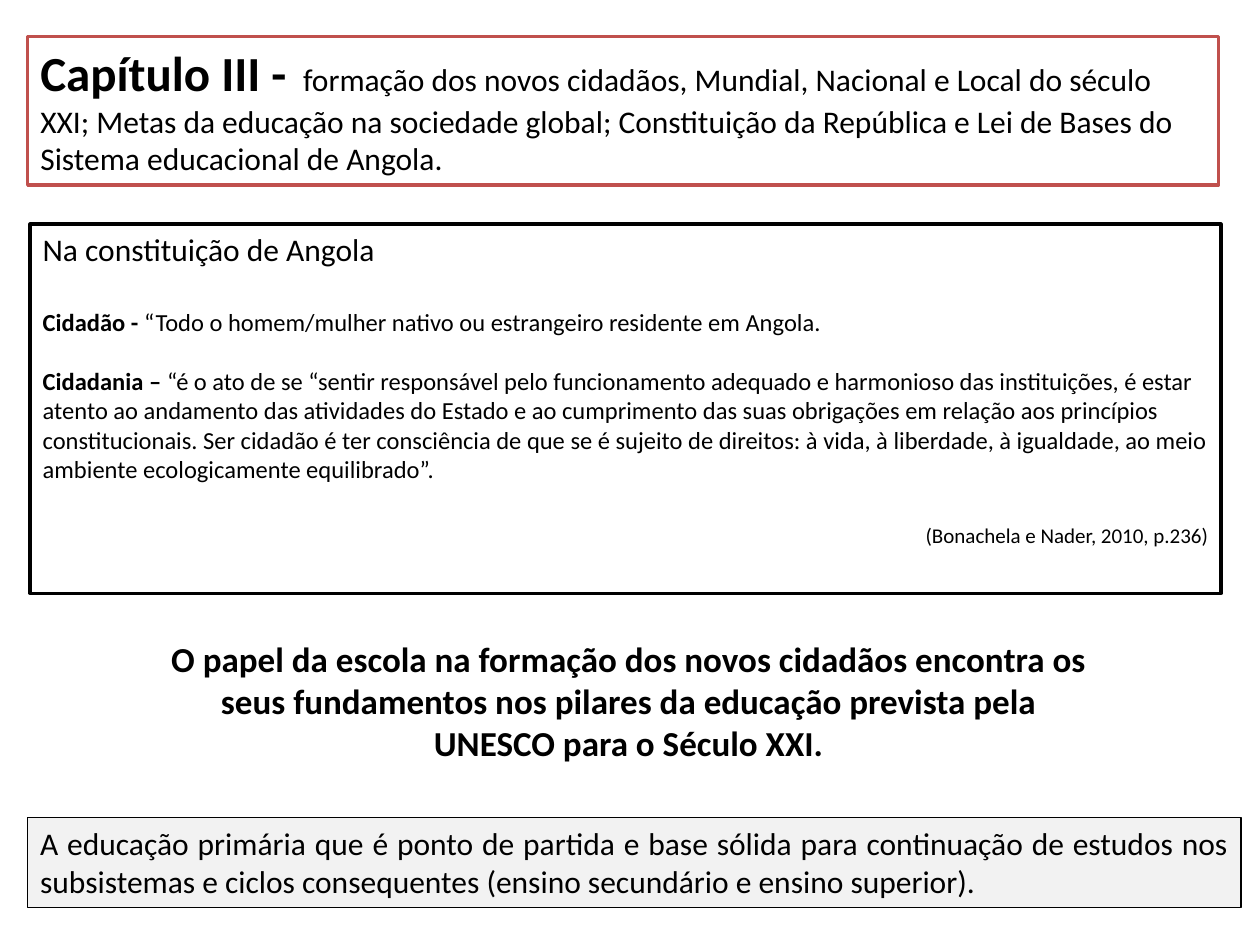
from pptx import Presentation
from pptx.dml.color import RGBColor
from pptx.enum.shapes import MSO_SHAPE as SHAPE
from pptx.enum.text import MSO_ANCHOR as ANCHOR, MSO_AUTO_SIZE as FIT, PP_ALIGN as ALIGN
from pptx.util import Inches, Pt

COLORS = {"text": "000000", "paper": "FFFFFF", "panel": "F2F2F2",
          "accent": "C0504D", "border": "000000"}
FONT = "Calibri"
LEFT, WIDTH = 0.22, 9.45
# Heights of one line of text at 18 and 14 pt, used as paragraph gaps
GAP_LARGE, GAP_SMALL = 22, 17


def color(name):
    return RGBColor.from_string(COLORS[name])


def place(s, left, top, width, height):
    s.left, s.top, s.width, s.height = map(Inches, (left, top, width, height))


def frame(s, fill, line, weight):
    s.fill.solid()
    s.fill.fore_color.rgb = color(fill)
    s.line.color.rgb = color(line)
    s.line.width = Pt(weight)


def clear_text(s):
    tf = s.text_frame
    tf.word_wrap = True
    tf.auto_size = FIT.NONE
    tf.vertical_anchor = ANCHOR.TOP
    return tf


def add_panel(slide, at, fill, line, weight):
    s = slide.shapes.add_shape(SHAPE.RECTANGLE, *map(Inches, at))
    s.shadow.inherit = False
    frame(s, fill, line, weight)
    return clear_text(s)


def write(tf, *runs, align=ALIGN.LEFT, before=0):
    """Add a paragraph of (text, size, bold) runs."""
    p = tf.paragraphs[0]
    if p.runs:
        p = tf.add_paragraph()
    p.alignment = align
    p.space_before = Pt(before)
    for text, size, bold in runs:
        r = p.add_run()
        r.text = text
        r.font.name, r.font.size, r.font.bold = FONT, Pt(size), bold
        r.font.color.rgb = color("text")


def main():
    prs = Presentation()
    prs.slide_width, prs.slide_height = Inches(10), Inches(7.5)
    slide = prs.slides.add_slide(prs.slide_layouts[5])

    # Chapter title
    title = slide.shapes.title
    place(title, LEFT, 0.29, WIDTH, 1.18)
    frame(title, "paper", "accent", 2)
    write(clear_text(title),
          ("Capítulo III - ", 28, True), (" ", 14, False),
          ("formação dos novos cidadãos, Mundial, Nacional e Local do século XXI; "
           "Metas da educação na sociedade global; Constituição da República e Lei "
           "de Bases do Sistema educacional de Angola.", 18, False))

    # Definitions from the constitution
    tf = add_panel(slide, (0.24, 1.78, WIDTH, 2.93), "paper", "border", 2)
    write(tf, ("Na constituição de Angola", 18, False))
    write(tf, ("Cidadão - ", 14, True),
          ("“Todo o homem/mulher nativo ou estrangeiro residente em Angola.", 14, False),
          before=GAP_LARGE)
    write(tf, ("Cidadania – ", 14, True),
          ("“é o ato de se “sentir responsável pelo funcionamento adequado e "
           "harmonioso das instituições, é estar atento ao andamento das atividades "
           "do Estado e ao cumprimento das suas obrigações em relação aos princípios "
           "constitucionais. Ser cidadão é ter consciência de que se é sujeito de "
           "direitos: à vida, à liberdade, à igualdade, ao meio ambiente "
           "ecologicamente equilibrado”.", 14, False),
          before=GAP_SMALL)
    write(tf, ("(Bonachela e Nader, 2010, p.236)", 12, False),
          align=ALIGN.RIGHT, before=GAP_LARGE)

    # Central statement
    statement = slide.shapes.add_textbox(*map(Inches, (1.21, 5.01, 7.56, 1.11)))
    write(clear_text(statement),
          ("O papel da escola na formação dos novos cidadãos encontra os seus "
           "fundamentos nos pilares da educação prevista pela UNESCO para o "
           "Século XXI.", 20, True), align=ALIGN.CENTER)

    # Closing note
    tf = add_panel(slide, (LEFT, 6.49, 9.63, 0.71), "panel", "border", 0.75)
    write(tf, ("A educação primária que é ponto de partida e base sólida para "
               "continuação de estudos nos subsistemas e ciclos consequentes (ensino "
               "secundário e ensino superior).", 18, False), align=ALIGN.JUSTIFY)

    prs.save("out.pptx")


if __name__ == "__main__":
    main()
